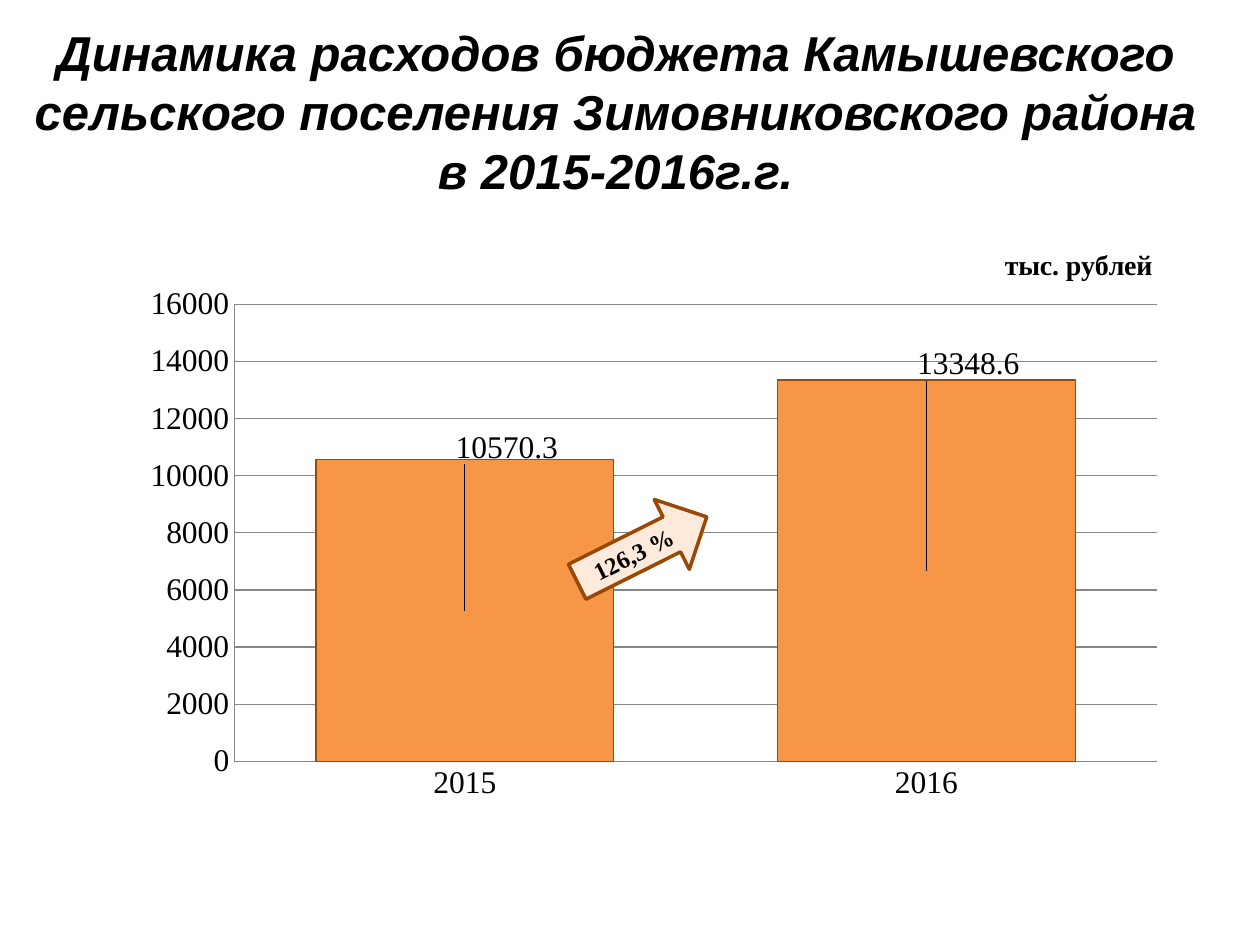
from pptx import Presentation
from pptx.chart.data import CategoryChartData
from pptx.dml.color import RGBColor
from pptx.enum.chart import XL_CHART_TYPE, XL_TICK_MARK
from pptx.enum.shapes import MSO_SHAPE
from pptx.enum.text import MSO_ANCHOR, MSO_AUTO_SIZE, PP_ALIGN
from pptx.oxml import parse_xml
from pptx.oxml.ns import nsdecls
from pptx.util import Inches, Pt

COLORS = {"text": "000000", "bar": "F79646", "border": "984807",
          "arrow": "FDEADA", "grid": "878787"}
SERIF = "Times New Roman"


def rgb(name):
    return RGBColor.from_string(COLORS[name])


def manual_layout(target="", **values):
    """Return a c:layout element; x, y, w and h are fractions of the chart."""
    parts = f'<c:layoutTarget val="{target}"/>' if target else ""
    if target or "edge" in values:
        values.pop("edge", None)
        parts += '<c:xMode val="edge"/><c:yMode val="edge"/>'
    parts += "".join(f'<c:{k} val="{v}"/>' for k, v in values.items())
    return parse_xml(f'<c:layout {nsdecls("c")}><c:manualLayout>{parts}'
                     '</c:manualLayout></c:layout>')


prs = Presentation()
prs.slide_width, prs.slide_height = Inches(10), Inches(7.5)
s = prs.slides.add_slide(prs.slide_layouts[5])

# Title
title = s.shapes.title
title.left, title.top = Inches(0.16), Inches(0.23)
title.width, title.height = Inches(9.45), Inches(1.48)
tf = title.text_frame
frame = {"word_wrap": True, "auto_size": MSO_AUTO_SIZE.NONE,
         "vertical_anchor": MSO_ANCHOR.MIDDLE,
         "margin_left": Inches(0.05), "margin_right": Inches(0.05),
         "margin_top": 0, "margin_bottom": Inches(0.18)}
for name, value in frame.items():
    setattr(tf, name, value)
p = tf.paragraphs[0]
p.alignment = PP_ALIGN.CENTER
r = p.add_run()
r.text = ("Динамика расходов бюджета Камышевского сельского поселения "
          "Зимовниковского района в 2015-2016г.г.")
for name, value in {"name": "Arial", "size": Pt(28), "bold": True,
                    "italic": True}.items():
    setattr(r.font, name, value)
r.font.color.rgb = rgb("text")

# Spending chart
data = CategoryChartData()
data.categories = ["2015", "2016"]
data.add_series("Series 1", (10570.3, 13348.6))
chart = s.shapes.add_chart(XL_CHART_TYPE.COLUMN_STACKED, Inches(0.86), Inches(1.72),
                           Inches(8.33), Inches(4.97), data).chart
chart.has_legend = False
chart.font.name, chart.font.size = SERIF, Pt(18)
chart.font.color.rgb = rgb("text")

chart.has_title = True
r = chart.chart_title.text_frame.paragraphs[0].add_run()
r.text = "тыс. рублей"
for name, value in {"name": SERIF, "size": Pt(16), "bold": True}.items():
    setattr(r.font, name, value)
r.font.color.rgb = rgb("text")
title_xml = chart.chart_title._element
for old in title_xml.findall("{*}layout"):
    title_xml.remove(old)
title_xml.find("{*}tx").addnext(manual_layout(edge=True, x=0.85, y=0.04))
chart.chart_title.include_in_layout = False

plot_area = chart._chartSpace.chart.plotArea
for old in plot_area.findall("{*}layout"):
    plot_area.remove(old)
plot_area.insert(0, manual_layout("inner", x=0.12, y=0.14, w=0.88, h=0.73))

plot = chart.plots[0]
plot.gap_width, plot.overlap, plot.vary_by_categories = 55, 100, False
series = plot.series[0]
series.format.fill.solid()
series.format.fill.fore_color.rgb = rgb("bar")
series.format.line.color.rgb = rgb("border")
series.format.line.width = Pt(0.75)
labels = series.data_labels
labels.show_value = True
labels.number_format, labels.number_format_is_linked = "General", False

# Labels are moved from the bar centres to just above the bars
for i, rise in enumerate((-0.26, -0.33)):
    dLbl = labels._element._insert_dLbl_in_sequence(i)
    dLbl.find("{*}idx").addnext(manual_layout(x=0.04, y=rise))

value_axis, category_axis = chart.value_axis, chart.category_axis
value_axis.minimum_scale, value_axis.maximum_scale = 0, 16000
value_axis.major_unit = 2000
value_axis.tick_labels.number_format = "General"
value_axis.tick_labels.number_format_is_linked = False
value_axis.has_major_gridlines = True
for axis in (value_axis, category_axis):
    axis.major_tick_mark = axis.minor_tick_mark = XL_TICK_MARK.NONE
for item in (value_axis, category_axis, value_axis.major_gridlines):
    item.format.line.color.rgb = rgb("grid")
    item.format.line.width = Pt(0.75)

# Growth arrow
arrow = s.shapes.add_shape(MSO_SHAPE.RIGHT_ARROW, Inches(4.52), Inches(4.05),
                           Inches(1.15), Inches(0.62))
arrow.rotation = 333.4
arrow.shadow.inherit = False
arrow.fill.solid()
arrow.fill.fore_color.rgb = rgb("arrow")
arrow.line.color.rgb = rgb("border")
arrow.line.width = Pt(2)
tf = arrow.text_frame
for side in ("left", "right", "top", "bottom"):
    setattr(tf, f"margin_{side}", 0)
tf.vertical_anchor = MSO_ANCHOR.MIDDLE
p = tf.paragraphs[0]
p.alignment = PP_ALIGN.CENTER
r = p.add_run()
r.text = "126,3 %"
for name, value in {"name": SERIF, "size": Pt(14), "bold": True}.items():
    setattr(r.font, name, value)
r.font.color.rgb = rgb("text")

prs.save("out.pptx")
